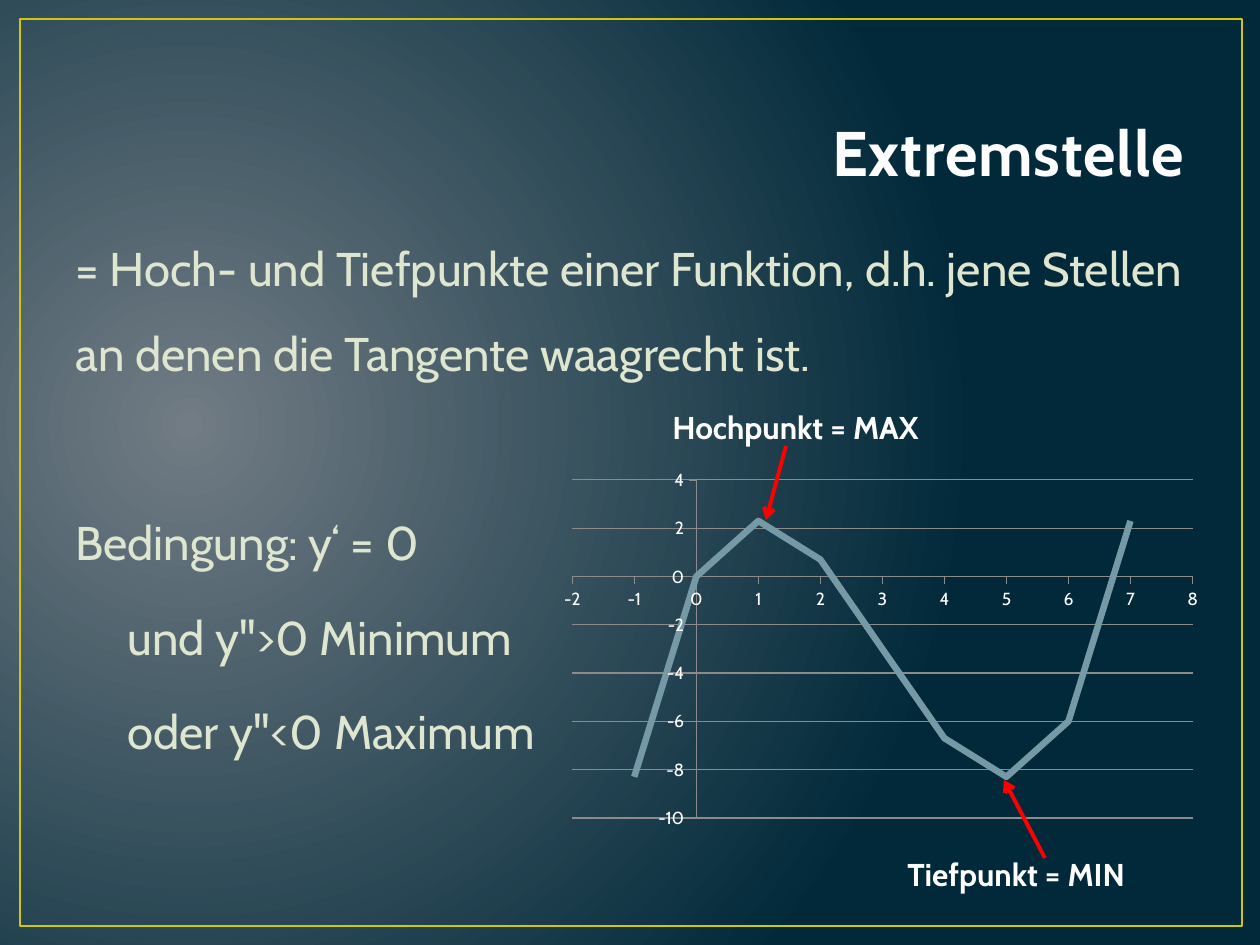
import pptx
import pptx.chart.data
import pptx.dml.color
import pptx.enum.chart
import pptx.enum.shapes
import pptx.enum.text
import pptx.oxml
import pptx.oxml.ns
import pptx.util

SCALE = 914400 / 126
ALIGN = pptx.enum.text.PP_ALIGN
ANCHOR = pptx.enum.text.MSO_ANCHOR
KIND = pptx.enum.chart.XL_CHART_TYPE.XY_SCATTER_SMOOTH_NO_MARKERS
TICK = pptx.enum.chart.XL_TICK_MARK


def px(count):
    return round(count * SCALE)


def tint(code):
    return pptx.dml.color.RGBColor.from_string(code)


def node(tag, **attrs):
    item = pptx.oxml.parse_xml(f"<a:{tag} {pptx.oxml.ns.nsdecls('a')}/>")
    for key, value in attrs.items():
        item.set(key, str(value))
    return item


def write(para, text, size=18, color="FFFFFF", bold=False, align=ALIGN.LEFT,
          lead=1.0, before=0, indent=0, space=0):
    para.alignment = align
    para.line_spacing = lead
    para.space_before = pptx.util.Pt(before)
    para._p.get_or_add_pPr().set("marL", str(px(indent)))
    run = para.add_run()
    run.text = text
    font = run.font
    font.name, font.size, font.bold = "Cabin", pptx.util.Pt(size), bold
    font.color.rgb = tint(color)
    if space:
        run._r.get_or_add_rPr().set("spc", str(space))


class Deck:
    """Holds the style and the current slide, and draws each kind of element."""

    frame, curve, arrow, grid = "CFC60D", "759AA5", "FF0000", "8B8B8B"
    white, title, pale = "FFFFFF", "FEFEFE", "DFE6D0"

    def __init__(self):
        self.file = pptx.Presentation()
        self.file.slide_width, self.file.slide_height = px(1260), px(945)
        self.slide = self.file.slides.add_slide(self.file.slide_layouts[6])
        self.shapes = self.slide.shapes

    def glow(self, inner, outer):
        fill = self.slide.background.fill
        fill.gradient()
        for stop, code, place in zip(fill.gradient_stops, (inner, outer), (0, 1)):
            stop.color.rgb, stop.position = tint(code), place
        round_path = node("path", path="circle")
        round_path.append(node("fillToRect", l=15000, t=50000, r=85000, b=60000))
        root = self.slide.background._cSld
        line = root.find(".//" + pptx.oxml.ns.qn("a:lin"))
        line.getparent().replace(line, round_path)

    def border(self, *box):
        shape = self.shapes.add_shape(
            pptx.enum.shapes.MSO_SHAPE.RECTANGLE, *map(px, box))
        shape.shadow.inherit = False
        shape.fill.background()
        shape.line.color.rgb = tint(self.frame)
        shape.line.width = pptx.util.Pt(1.5)

    def text(self, box, lines, anchor=ANCHOR.TOP, **style):
        frame = self.shapes.add_textbox(*map(px, box)).text_frame
        frame.word_wrap = True
        frame.vertical_anchor = anchor
        for index, (line, extra) in enumerate(lines):
            para = frame.add_paragraph() if index else frame.paragraphs[0]
            write(para, line, **{**style, **extra})

    def pointer(self, *ends):
        line = self.shapes.add_connector(
            pptx.enum.shapes.MSO_CONNECTOR.STRAIGHT, *map(px, ends))
        line.line.color.rgb = tint(self.arrow)
        line.line.width = pptx.util.Pt(2.25)
        line.line._get_or_add_ln().append(node("tailEnd", type="arrow"))
        line._element.spPr.append(node("effectLst"))

    def axis(self, axis, low, high, step, grid):
        axis.minimum_scale, axis.maximum_scale, axis.major_unit = low, high, step
        axis.has_major_gridlines = grid
        axis.major_tick_mark, axis.minor_tick_mark = TICK.OUTSIDE, TICK.NONE
        lines = [axis.format.line]
        if grid:
            lines.append(axis.major_gridlines.format.line)
        for line in lines:
            line.color.rgb = tint(self.grid)
            line.width = pptx.util.Pt(0.75)

    def graph(self, box, name, points):
        data = pptx.chart.data.XyChartData()
        series = data.add_series(name)
        for x, y in points:
            series.add_data_point(x, y)
        chart = self.shapes.add_chart(KIND, *map(px, box), data).chart
        chart.has_legend = chart.has_title = False
        chart.font.name, chart.font.size = "Cabin", pptx.util.Pt(10)
        chart.font.color.rgb = tint(self.white)
        plot = chart.plots[0]
        plot.vary_by_categories = False
        curve = plot.series[0]
        curve.smooth = True
        curve.format.line.color.rgb = tint(self.curve)
        curve.format.line.width = pptx.util.Pt(3.75)
        self.axis(chart.category_axis, -2, 8, 1, False)
        self.axis(chart.value_axis, -10, 4, 2, True)


def main():
    deck = Deck()
    deck.glow("717C84", "01293A")
    deck.border(20, 19, 1222, 907)
    deck.text((63, 38, 1134, 157), [("Extremstelle", {})], ANCHOR.BOTTOM,
              size=36, color=deck.title, bold=True, align=ALIGN.RIGHT, space=50)
    deck.text((63, 220, 1134, 530), [
        ("= Hoch- und Tiefpunkte einer Funktion, d.h. jene Stellen "
         "an denen die Tangente waagrecht ist.", {}),
        ("Bedingung: y‘ = 0", {"before": 59.4}),
        ("und y''>0 Minimum", {"indent": 52}),
        ("oder y''<0 Maximum", {"indent": 52}),
    ], ANCHOR.MIDDLE, size=27, color=deck.pale, lead=1.5, before=5.4)
    heights = [-8.3, 0, 2.3, 0.7, -3, -6.7, -8.3, -6, 2.3]
    deck.graph((551, 462, 660, 374), "Series 1", enumerate(heights, -1))
    deck.pointer(1045, 858, 1004, 780)
    deck.pointer(786, 446, 766, 520)
    for left, top, label in ((660, 402, "Hochpunkt = MAX"),
                             (895, 849, "Tiefpunkt = MIN")):
        deck.text((left, top, 297, 50), [(label, {})], bold=True)
    deck.file.save("out.pptx")


if __name__ == "__main__":
    main()
